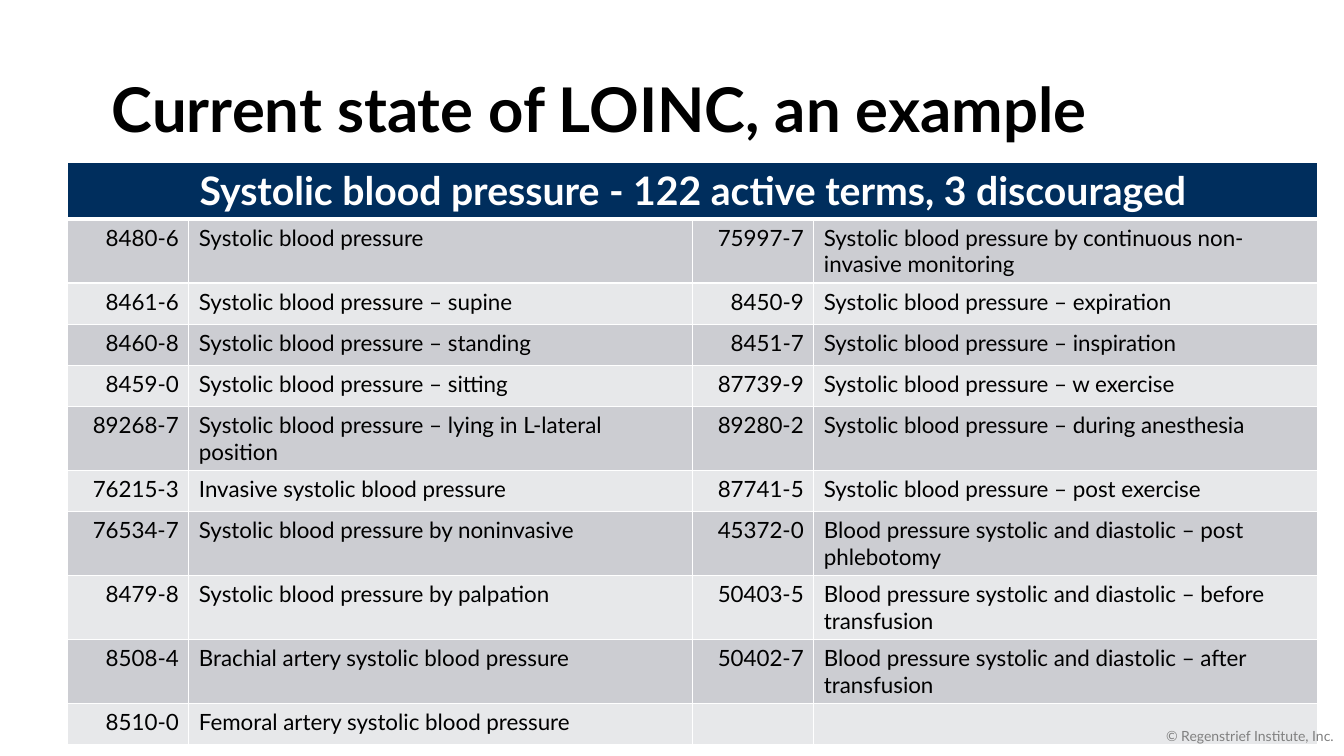
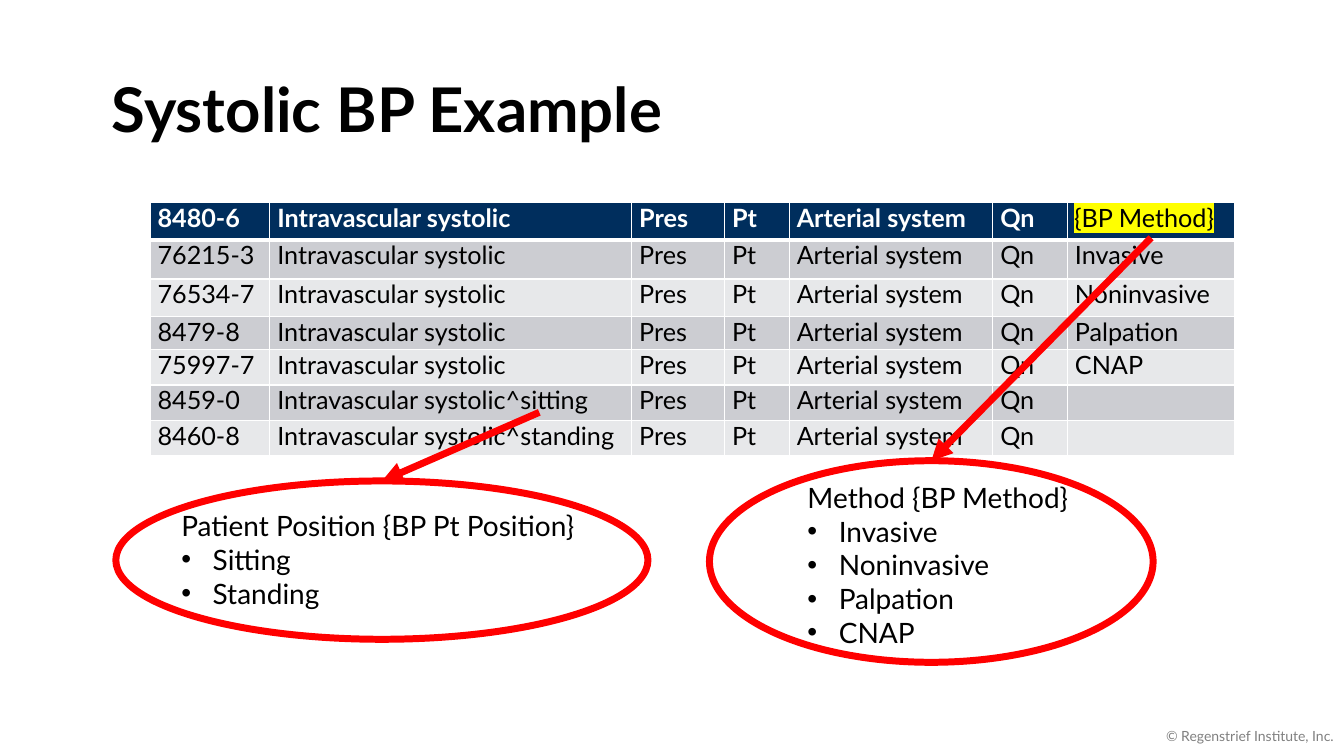
import pptx
import pptx.dml.color
import pptx.enum.shapes
import pptx.enum.text
import pptx.oxml
import pptx.oxml.ns
import pptx.util
from lxml import etree

Cm = pptx.util.Cm
Pt = pptx.util.Pt
RGBColor = pptx.dml.color.RGBColor
ALIGN = pptx.enum.text.PP_ALIGN
ANCHOR = pptx.enum.text.MSO_ANCHOR
qn = pptx.oxml.ns.qn

FONT = "Lato"
BLACK = RGBColor(0x00, 0x00, 0x00)
WHITE = RGBColor(0xFF, 0xFF, 0xFF)
NAVY = RGBColor(0x00, 0x2E, 0x5D)
BAND_DARK = RGBColor(0xCC, 0xCD, 0xD2)
BAND_LIGHT = RGBColor(0xE7, 0xE8, 0xEA)
GREY = RGBColor(0x80, 0x80, 0x80)
RED = RGBColor(0xFF, 0x00, 0x00)
YELLOW = RGBColor(0xFF, 0xFF, 0x00)

TERM_ROWS = [
    ("8480-6", "Systolic blood pressure",
     "75997-7", "Systolic blood pressure by continuous non-invasive monitoring"),
    ("8461-6", "Systolic blood pressure – supine",
     "8450-9", "Systolic blood pressure – expiration"),
    ("8460-8", "Systolic blood pressure – standing",
     "8451-7", "Systolic blood pressure – inspiration"),
    ("8459-0", "Systolic blood pressure – sitting",
     "87739-9", "Systolic blood pressure – w exercise"),
    ("89268-7", "Systolic blood pressure – lying in L-lateral position",
     "89280-2", "Systolic blood pressure – during anesthesia"),
    ("76215-3", "Invasive systolic blood pressure",
     "87741-5", "Systolic blood pressure – post exercise"),
    ("76534-7", "Systolic blood pressure by noninvasive",
     "45372-0", "Blood pressure systolic and diastolic – post phlebotomy"),
    ("8479-8", "Systolic blood pressure by palpation",
     "50403-5", "Blood pressure systolic and diastolic – before transfusion"),
    ("8508-4", "Brachial artery systolic blood pressure",
     "50402-7", "Blood pressure systolic and diastolic – after transfusion"),
    ("8510-0", "Femoral artery systolic blood pressure", "", ""),
]

METHOD_TERMS = [
    ("8480-6", "", ""),
    ("76215-3", "", "Invasive"),
    ("76534-7", "", "Noninvasive"),
    ("8479-8", "", "Palpation"),
    ("75997-7", "", "CNAP"),
    ("8459-0", "^sitting", ""),
    ("8460-8", "^standing", ""),
]


def add_run(paragraph, text, size, color=BLACK, bold=False):
    run = paragraph.add_run()
    run.text = text
    run.font.size = Pt(size)
    run.font.name = FONT
    run.font.bold = bold
    run.font.color.rgb = color
    return run


def add_text_box(shapes, left, top, width, height, anchor=ANCHOR.TOP):
    box = shapes.add_textbox(Cm(left), Cm(top), Cm(width), Cm(height))
    box.text_frame.word_wrap = True
    box.text_frame.vertical_anchor = anchor
    return box.text_frame


def add_slide(presentation, title):
    slide = presentation.slides.add_slide(presentation.slide_layouts[6])
    frame = add_text_box(slide.shapes, 2.57, 0.99, 29.21, 3.68, ANCHOR.MIDDLE)
    frame.paragraphs[0].line_spacing = 0.9
    add_run(frame.paragraphs[0], title, 44, bold=True)
    return slide


def add_footer(slide):
    frame = add_text_box(slide.shapes, 26.24, 18.03, 7.62, 1.02, ANCHOR.MIDDLE)
    frame.paragraphs[0].alignment = ALIGN.RIGHT
    add_run(frame.paragraphs[0], "© Regenstrief Institute, Inc.", 10, GREY)


def set_borders(cell, top=1, bottom=1):
    properties = cell._tc.get_or_add_tcPr()
    widths = {"a:lnL": 1, "a:lnR": 1, "a:lnT": top, "a:lnB": bottom}
    for position, (tag, width) in enumerate(widths.items()):
        line = etree.Element(qn(tag), w=str(Pt(width)))
        fill = etree.SubElement(line, qn("a:solidFill"))
        etree.SubElement(fill, qn("a:srgbClr"), val=str(WHITE))
        properties.insert(position, line)


def add_table(slide, left, top, column_widths, row_heights, rows,
              header_size, body_size, right_columns=(), margins=None):
    table = slide.shapes.add_table(
        len(rows), len(column_widths), Cm(left), Cm(top),
        Cm(sum(column_widths)), Cm(sum(row_heights))).table
    table.horz_banding = False
    for column, width in zip(table.columns, column_widths):
        column.width = Cm(width)
    for row, height in zip(table.rows, row_heights):
        row.height = Cm(height)
    for row_index, texts in enumerate(rows):
        header = row_index == 0
        band = BAND_DARK if row_index % 2 else BAND_LIGHT
        for column_index, text in enumerate(texts):
            cell = table.cell(row_index, column_index)
            cell.fill.solid()
            cell.fill.fore_color.rgb = NAVY if header else band
            set_borders(cell, top=3 if row_index == 1 else 1, bottom=3 if header else 1)
            if margins:
                side, vertical = margins
                cell.margin_left = cell.margin_right = Cm(side)
                cell.margin_top = cell.margin_bottom = Cm(vertical)
            paragraph = cell.text_frame.paragraphs[0]
            if column_index in right_columns:
                paragraph.alignment = ALIGN.RIGHT
            if text:
                add_run(paragraph, text, header_size if header else body_size,
                        WHITE if header else BLACK, header)
    return table


def add_bullet(paragraph):
    properties = paragraph._p.get_or_add_pPr()
    indent = Cm(0.79)
    properties.set("marL", str(indent))
    properties.set("indent", str(-indent))
    color = etree.SubElement(properties, qn("a:buClr"))
    etree.SubElement(color, qn("a:srgbClr"), val=str(BLACK))
    etree.SubElement(properties, qn("a:buFont"), typeface="Arial")
    etree.SubElement(properties, qn("a:buChar"), char="•")


def add_highlighted_label(slide, text, left, top, width, height):
    frame = add_text_box(slide.shapes, left, top, width, height)
    run = add_run(frame.paragraphs[0], text, 18)
    highlight = etree.Element(qn("a:highlight"))
    etree.SubElement(highlight, qn("a:srgbClr"), val=str(YELLOW))
    run._r.rPr.find(qn("a:latin")).addprevious(highlight)


def add_callout(slide, heading, items, text_area, oval_area, arrow_start):
    shapes = slide.shapes.add_group_shape().shapes
    frame = add_text_box(shapes, *text_area)
    add_run(frame.paragraphs[0], heading, 20)
    for item in items:
        paragraph = frame.add_paragraph()
        add_bullet(paragraph)
        add_run(paragraph, item, 20)

    oval = shapes.add_shape(pptx.enum.shapes.MSO_SHAPE.OVAL, *map(Cm, oval_area))
    oval.shadow.inherit = False
    oval.fill.background()

    start_x, start_y = map(Cm, arrow_start)
    arrow = shapes.add_connector(
        pptx.enum.shapes.MSO_CONNECTOR.STRAIGHT, start_x, start_y,
        oval.left + oval.width // 2, oval.top)
    arrow.end_connect(oval, 0)
    for shape in (oval, arrow):
        shape.line.color.rgb = RED
        shape.line.width = Pt(5)
    etree.SubElement(arrow.line._get_or_add_ln(), qn("a:tailEnd"), type="triangle")
    etree.SubElement(arrow._element.spPr, qn("a:effectLst"))


def build_current_state(presentation):
    slide = add_slide(presentation, "Current state of LOINC, an example")
    heading = ("Systolic blood pressure - 122 active terms, 3 discouraged", "", "", "")
    rows = [heading] + TERM_ROWS
    table = add_table(slide, 1.71, 4.08, [3.05, 12.7] * 2, [1.04] * len(rows),
                      rows, 28, 16, right_columns=(0, 2))
    table.cell(0, 0).merge(table.cell(0, 3))
    table.cell(0, 0).text_frame.paragraphs[0].alignment = ALIGN.CENTER
    add_footer(slide)


def build_systolic_example(presentation):
    slide = add_slide(presentation, "Systolic BP Example")
    rows = [(code, "Intravascular systolic" + position, "Pres", "Pt",
             "Arterial system", "Qn", method)
            for code, position, method in METHOD_TERMS]
    add_table(slide, 3.78, 5.1, [3.02, 9.12, 2.34, 1.63, 5.13, 1.88, 4.22],
              [0.94, 0.99, 0.94, 0.84, 0.89, 0.89, 0.89], rows, 18, 18,
              margins=(0.19, 0))
    add_highlighted_label(slide, "{BP Method}", 26.82, 4.98, 4.39, 1.02)
    methods = [method for _, _, method in METHOD_TERMS if method]
    add_callout(slide, "Method {BP Method}", methods,
                (20.1, 11.99, 7.19, 4.52), (17.88, 11.61, 11.18, 5.08), (29.01, 5.99))
    add_callout(slide, "Patient Position {BP Pt Position}", ["Sitting", "Standing"],
                (4.32, 12.7, 10.69, 2.82), (2.92, 12.12, 13.41, 3.99), (13.59, 10.39))
    add_footer(slide)


def main():
    presentation = pptx.Presentation()
    presentation.slide_width = Cm(33.87)
    presentation.slide_height = Cm(19.05)
    build_current_state(presentation)
    build_systolic_example(presentation)
    presentation.save("out.pptx")


if __name__ == "__main__":
    main()
